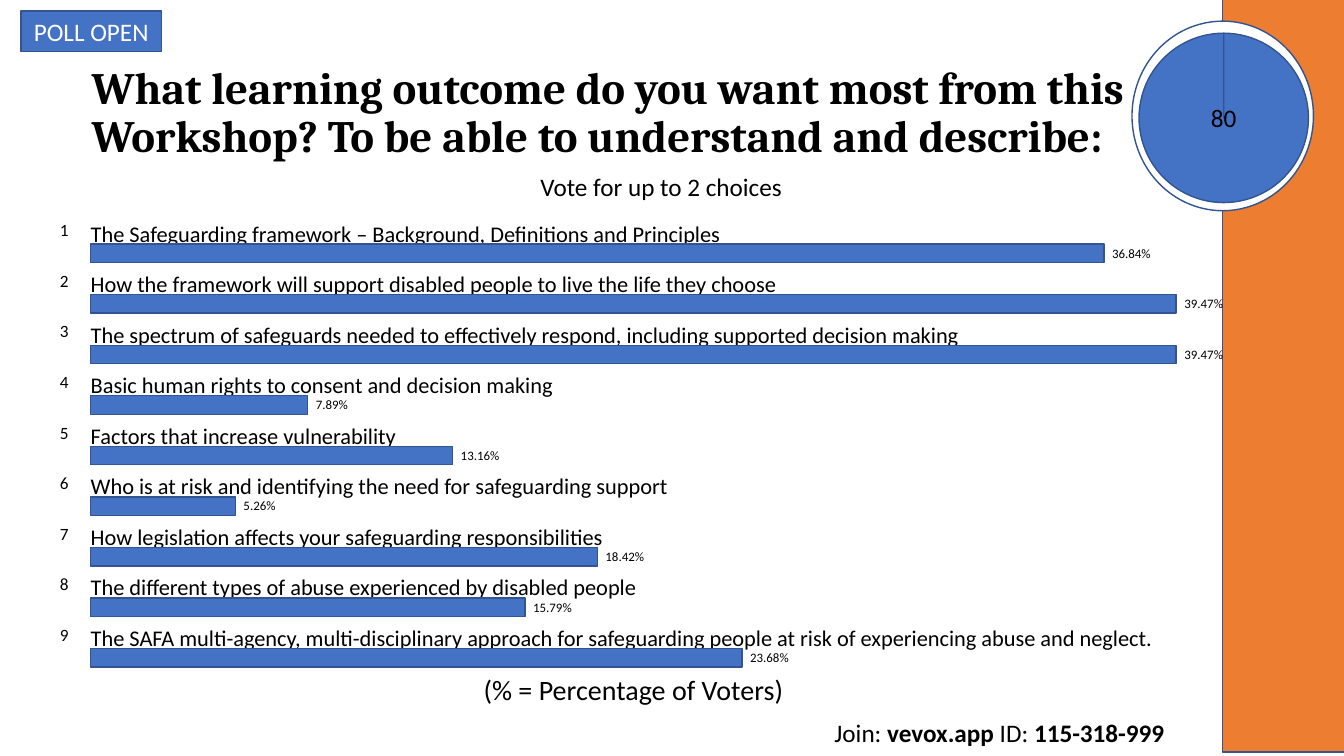
from pptx import Presentation
from pptx.dml.color import RGBColor
from pptx.enum.shapes import MSO_SHAPE
from pptx.enum.text import MSO_ANCHOR, MSO_AUTO_SIZE, PP_ALIGN
from pptx.util import Pt

RECT, OVAL, PIE = MSO_SHAPE.RECTANGLE, MSO_SHAPE.OVAL, MSO_SHAPE.PIE
TOP, MIDDLE = MSO_ANCHOR.TOP, MSO_ANCHOR.MIDDLE
LEFT, CENTER, RIGHT = PP_ALIGN.LEFT, PP_ALIGN.CENTER, PP_ALIGN.RIGHT
GROW, FIXED = MSO_AUTO_SIZE.SHAPE_TO_FIT_TEXT, MSO_AUTO_SIZE.NONE

BLUE, OUTLINE, ORANGE = "4472C4", "325491", "ED7D31"
WHITE, BLACK = "FFFFFF", "000000"
MARGINS = (7.2, 3.6, 7.2, 3.6)

CHOICES = [
    ("The Safeguarding framework – Background, Definitions and Principles", 36.84),
    ("How the framework will support disabled people to live the life they choose", 39.47),
    ("The spectrum of safeguards needed to effectively respond, including supported decision making", 39.47),
    ("Basic human rights to consent and decision making", 7.89),
    ("Factors that increase vulnerability", 13.16),
    ("Who is at risk and identifying the need for safeguarding support", 5.26),
    ("How legislation affects your safeguarding responsibilities", 18.42),
    ("The different types of abuse experienced by disabled people", 15.79),
    ("The SAFA multi-agency, multi-disciplinary approach for safeguarding people "
     "at risk of experiencing abuse and neglect.", 23.68),
]


def color(value):
    return RGBColor.from_string(value)


def write(s, text, size=18, font="Calibri", fill=BLACK, bold=False, align=LEFT,
          anchor=TOP, margins=MARGINS, wrap=True, fit=GROW, spacing=None):
    tf = s.text_frame
    tf.word_wrap, tf.auto_size, tf.vertical_anchor = wrap, fit, anchor
    (tf.margin_left, tf.margin_top,
     tf.margin_right, tf.margin_bottom) = [Pt(m) for m in margins]
    p = tf.paragraphs[0]
    p.alignment, p.line_spacing = align, spacing
    runs = [(text, bold)] if isinstance(text, str) else text
    for words, strong in runs:
        r = p.add_run()
        r.text = words
        r.font.name, r.font.size, r.font.bold = font, Pt(size), strong
        r.font.color.rgb = color(fill)


def add_text(slide, box, text, **style):
    write(slide.shapes.add_textbox(*[Pt(v) for v in box]), text, **style)


def add_shape(slide, kind, box, fill):
    sp = slide.shapes.add_shape(kind, *[Pt(v) for v in box])
    sp.shadow.inherit = False
    sp.fill.solid()
    sp.fill.fore_color.rgb = color(fill)
    sp.line.color.rgb = color(OUTLINE)
    sp.line.width = Pt(1)
    return sp


def add_side_panel(slide, x, y, width, height):
    add_shape(slide, RECT, (x, y, width, height), ORANGE)
    add_shape(slide, OVAL, (x - 64.8, y + 18, 129.6, 135.4), WHITE)
    count = add_shape(slide, PIE, (x - 59.8, y + 26.6, 121, 121), BLUE)
    count.adjustments[0] = count.adjustments[1] = 162
    write(count, "80", align=CENTER, anchor=MIDDLE, wrap=False, fit=FIXED)


def add_heading(slide, x, y, width, height):
    title = slide.shapes.title
    title.left, title.top, title.width, title.height = [Pt(v) for v in (x, y, width, height)]
    write(title, "What learning outcome do you want most from this Workshop? "
          "To be able to understand and describe:", size=32, font="Cambria",
          bold=True, anchor=MIDDLE, margins=(7.2,) * 4, fit=FIXED, spacing=0.9)
    status = add_shape(slide, RECT, (x - 43.2, y - 50.4, 100.1, 29.1), BLUE)
    write(status, "POLL OPEN", fill=WHITE, align=CENTER)
    add_text(slide, (x, y + 60.5, 828, 29.1), "Vote for up to 2 choices", align=CENTER)


def add_choice(slide, x, y, number, label, share, bar_width):
    add_text(slide, (x - 30.2, y, 30.2, 18.9), str(number), size=12.3, align=RIGHT,
             margins=(7.2, 4.3, 15.8, 0), wrap=False)
    add_text(slide, (x, y, 802, 25.2), label, size=16, margins=(0, 4.3, 0, 2.2))
    add_text(slide, (x + bar_width, y + 22.6, 33.8, 11.3), f"{share:.2f}%", size=9.2,
             margins=(5.8, 0, 0, 0), wrap=False)
    add_shape(slide, RECT, (x, y + 21.8, bar_width, 13.2), BLUE)


def add_results(slide, x, y, width, height):
    pitch = height / len(CHOICES)
    largest = max(share for _, share in CHOICES)
    for i, (label, share) in enumerate(CHOICES):
        add_choice(slide, x, y + i * pitch, i + 1, label, share, width * share / largest)
    add_text(slide, (x, y + height - 1, width, 31.5), "(% = Percentage of Voters)",
             size=20, align=CENTER, fit=FIXED)


def add_join_line(slide, x, y, width, height):
    add_text(slide, (x, y, width, height),
             [("Join: ", False), ("vevox.app", True), (" ID: ", False), ("115-318-999", True)],
             align=CENTER, wrap=False)


def main():
    prs = Presentation()
    prs.slide_width, prs.slide_height = Pt(960), Pt(540)
    slide = prs.slides.add_slide(prs.slide_layouts[5])
    add_side_panel(slide, 873.4, -2.9, 121.7, 540)
    add_heading(slide, 58.3, 58.3, 768.2, 46.1)
    add_results(slide, 64.8, 152.6, 775.4, 325)
    add_join_line(slide, 587.5, 509, 252.7, 29.1)
    prs.save("out.pptx")


if __name__ == "__main__":
    main()
